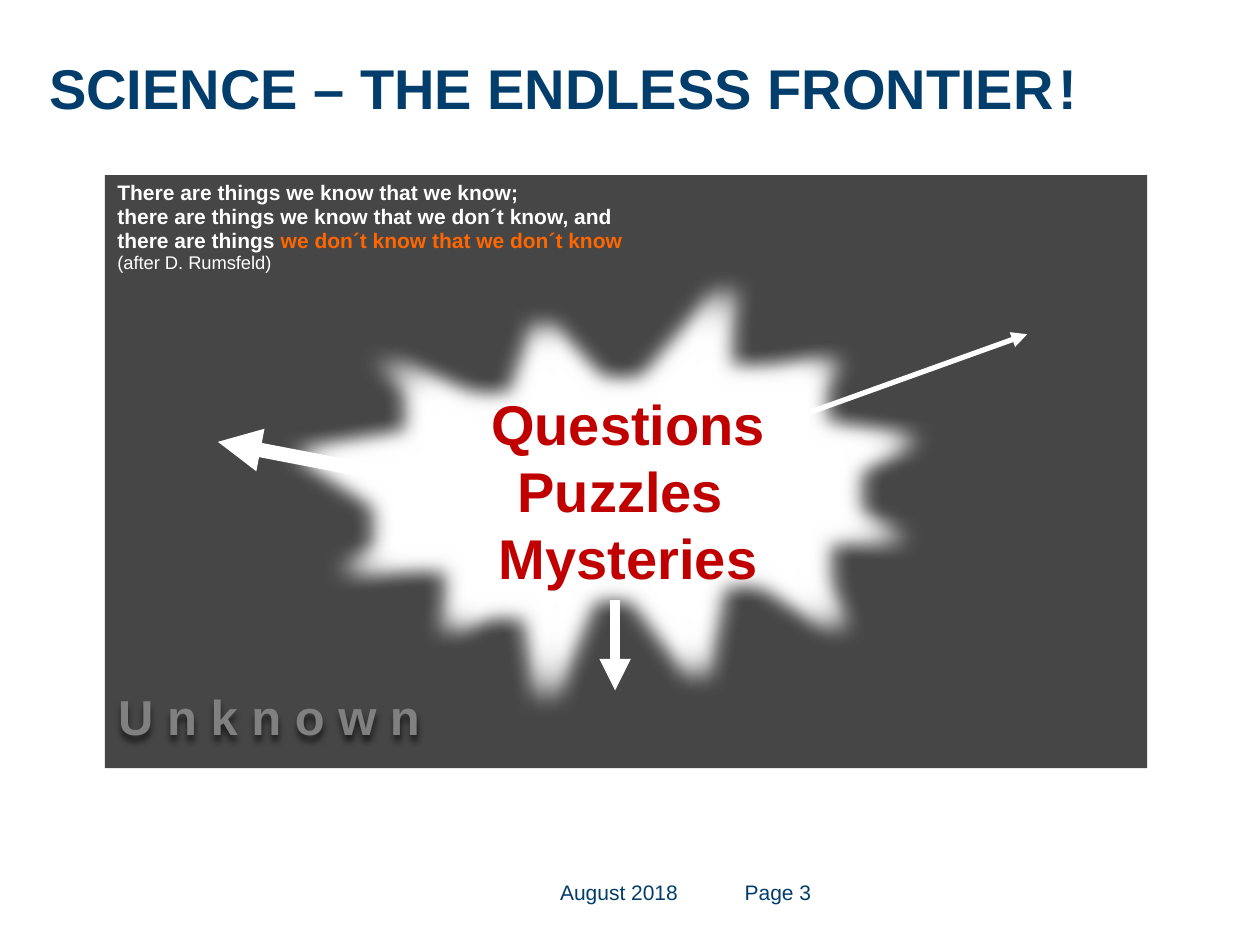
from lxml import etree
from pptx import Presentation
from pptx.dml.color import RGBColor
from pptx.enum.shapes import MSO_CONNECTOR, MSO_SHAPE
from pptx.enum.text import MSO_ANCHOR, MSO_AUTO_SIZE, PP_ALIGN
from pptx.oxml import parse_xml
from pptx.oxml.ns import qn
from pptx.util import Pt

CENTER, LEFT = PP_ALIGN.CENTER, PP_ALIGN.LEFT
TOP = MSO_ANCHOR.TOP
NO_FIT, GROW = MSO_AUTO_SIZE.NONE, MSO_AUTO_SIZE.SHAPE_TO_FIT_TEXT
STRAIGHT = MSO_CONNECTOR.STRAIGHT
RECT, BURST = MSO_SHAPE.RECTANGLE, MSO_SHAPE.EXPLOSION1

NAVY = RGBColor(0x02, 0x3D, 0x6B)
DARK = RGBColor(0x0D, 0x0D, 0x0D)
GRAY = RGBColor(0x80, 0x80, 0x80)
WHITE = RGBColor(0xFF, 0xFF, 0xFF)
RED = RGBColor(0xC0, 0x00, 0x00)
ORANGE = RGBColor(0xFF, 0x66, 0x00)

A_NS = 'xmlns:a="http://schemas.openxmlformats.org/drawingml/2006/main"'
SOFT_EDGE = f'<a:effectLst {A_NS}><a:softEdge rad="{Pt(12.5)}"/></a:effectLst>'
TEXT_SHADOW = (
    f'<a:effectLst {A_NS}><a:outerShdw blurRad="{Pt(4)}" dist="{Pt(3)}" dir="5400000">'
    '<a:srgbClr val="000000"><a:alpha val="60000"/></a:srgbClr></a:outerShdw></a:effectLst>')
NO_EFFECT = f'<a:effectLst {A_NS}/>'


def font(size, color, bold=False):
    return {"name": "Arial", "size": Pt(size), "color": color, "bold": bold}


def write(tf, lines, align=LEFT, spacing=None):
    """Fill a text frame; each line is a list of (text, format) runs."""
    for i, runs in enumerate(lines):
        p = tf.paragraphs[0] if i == 0 else tf.add_paragraph()
        p.alignment = align
        if spacing:
            p.line_spacing = spacing
        for text, fmt in runs:
            r = p.add_run()
            r.text = text
            for key, value in fmt.items():
                if key == "color":
                    r.font.color.rgb = value
                else:
                    setattr(r.font, key, value)


def set_frame(tf, inset=None, wrap=True, fit=NO_FIT):
    tf.word_wrap = wrap
    tf.auto_size = fit
    tf.vertical_anchor = TOP
    if inset is not None:
        for side in ("left", "top", "right", "bottom"):
            setattr(tf, f"margin_{side}", Pt(inset))


def add_text(s, box, lines, align=LEFT, spacing=None, **frame):
    sp = s.shapes.add_textbox(*map(Pt, box))
    set_frame(sp.text_frame, **frame)
    write(sp.text_frame, lines, align, spacing)
    return sp


def add_filled(s, kind, box, color):
    sp = s.shapes.add_shape(kind, *map(Pt, box))
    sp.shadow.inherit = False
    sp.fill.solid()
    sp.fill.fore_color.rgb = color
    sp.line.fill.background()
    return sp


def set_effect(sp, xml):
    props = sp._element.spPr
    for old in props.findall(qn("a:effectLst")):
        props.remove(old)
    props.append(parse_xml(xml))


def add_arrow(s, start, end, width):
    c = s.shapes.add_connector(STRAIGHT, *map(Pt, start + end))
    c.line.color.rgb = WHITE
    c.line.width = Pt(width)
    etree.SubElement(c.line._get_or_add_ln(), qn("a:tailEnd"), type="triangle")
    set_effect(c, NO_EFFECT)


def title(s, box):
    sp = s.shapes.title
    sp.left, sp.top, sp.width, sp.height = map(Pt, box)
    set_frame(sp.text_frame, inset=0)
    big, small = font(32, NAVY, True), font(6, NAVY, True)
    write(sp.text_frame,
          [[("SCIENCE – THE ENDLESS FRONTIER", big), (" ", small), ("!", big)]],
          spacing=1.14)


def footer(s, box):
    x, y, w, h = box
    fmt = font(12, NAVY)
    date_w, page_w = 122.5, 79
    add_text(s, (x, y, date_w, h), [[("August 2018", fmt)]], CENTER, inset=0)
    add_text(s, (x + w - page_w, y, page_w, h), [[("Page 3", fmt)]], inset=0)


def frontier(s, box):
    x, y, w, h = box
    # Dark field of the unknown
    field = add_filled(s, RECT, box, DARK)
    color = field.fill._xPr.find(".//" + qn("a:srgbClr"))
    etree.SubElement(color, qn("a:alpha"), val="76000")

    # Two soft bursts, with the label between them
    burst_y, burst_w, burst_h = y + 16.5, 453.5, 340
    for dx in (64.5, 73):
        burst = add_filled(s, BURST, (x + dx, burst_y, burst_w, burst_h), WHITE)
        set_effect(burst, SOFT_EDGE)
        if dx == 64.5:
            label = add_text(s, (x + 0.5, y + 289, 258, 41),
                             [[("U n k n o w n", font(28, GRAY, True))]], fit=GROW)
            set_effect(label, TEXT_SHADOW)

    # Centre words
    red = font(32, RED, True)
    add_text(s, (x + 213, y + 119, 172, 124),
             [[(word, red)] for word in ("Questions", "Puzzles ", "Mysteries")],
             CENTER, wrap=False, fit=GROW)

    # Arrows pointing out into the unknown
    for start, end, width in (((385, 142), (527, 91), 3),
                              ((213, 181), (64.5, 152.5), 8.25),
                              ((291.5, 243), (291.5, 294.5), 6)):
        add_arrow(s, (x + start[0], y + start[1]), (x + end[0], y + end[1]), width)

    # Quotation
    white = font(12, WHITE, True)
    add_text(s, (x, y, 310, 62.5), [
        [("There are things we know that we know;", white)],
        [("there are things we know that we don´t know, and", white)],
        [("there are things ", white),
         ("we don´t know that we don´t know", font(12, ORANGE, True))],
        [("(after D. Rumsfeld)", font(10.5, WHITE))],
    ], spacing=0.95, wrap=False, fit=GROW)


def main():
    prs = Presentation()
    prs.slide_width, prs.slide_height = Pt(720), Pt(540)
    s = prs.slides.add_slide(prs.slide_layouts[5])
    title(s, (28, 25, 663, 88.5))
    footer(s, (292.5, 502.5, 212, 17.5))
    frontier(s, (60, 100, 595.5, 339))
    prs.save("out.pptx")


if __name__ == "__main__":
    main()
